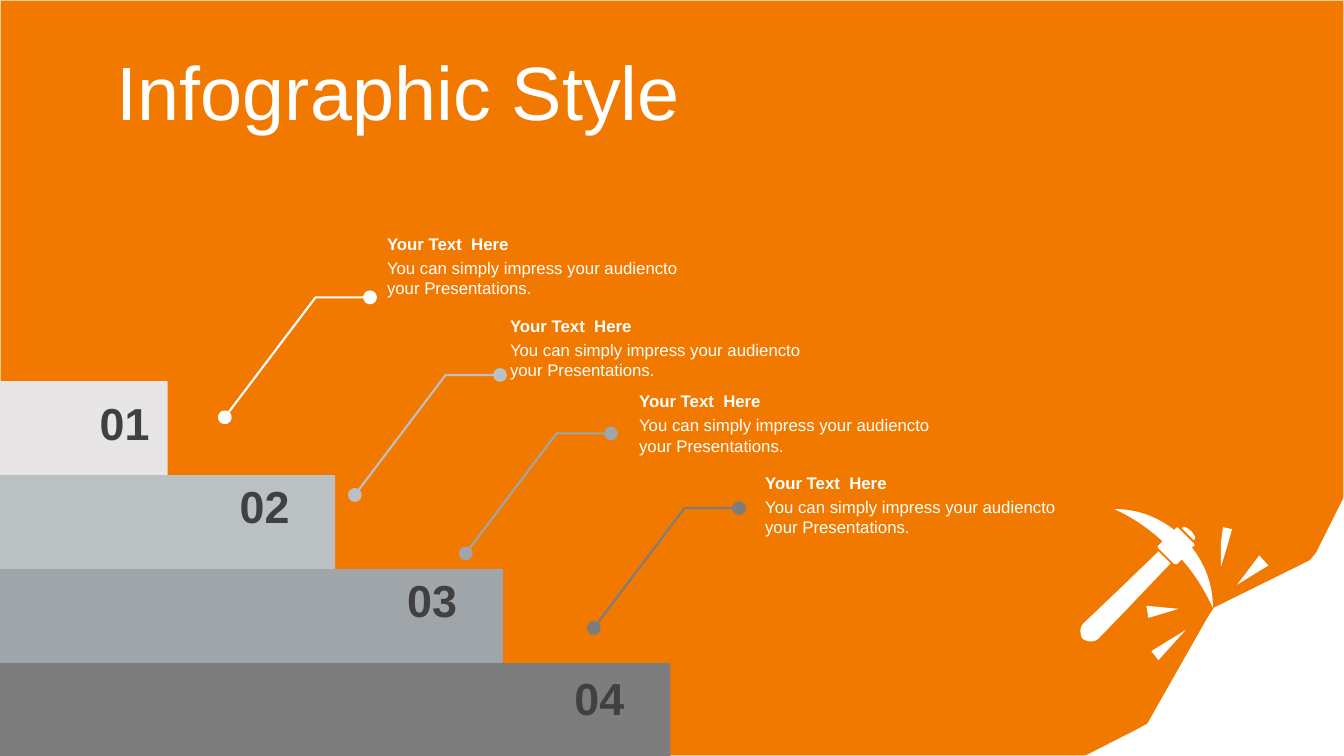
from pptx import Presentation
from pptx.dml.color import RGBColor
from pptx.enum.shapes import MSO_SHAPE
from pptx.enum.text import MSO_ANCHOR, PP_ALIGN
from pptx.oxml.ns import qn
from pptx.util import Pt
from lxml import etree

RECT = MSO_SHAPE.RECTANGLE
TOP, MID = MSO_ANCHOR.TOP, MSO_ANCHOR.MIDDLE
LEFT, CENTER = PP_ALIGN.LEFT, PP_ALIGN.CENTER
SCALE = 9144  # 100 px to the inch
WIDE, HIGH = 1333, 750
FONT = "Arial"
ORANGE, WHITE, PEACH, DARK = "F27900", "FFFFFF", "FFC994", "404040"
HEAD = "Your Text  Here"
BODY = "You can simply impress your audiencto your Presentations."

# Step colour, lead colour, then corners of the number, lead and note
STEPS = [
    ("E7E5E6", WHITE, (69, 388), (223, 414), (374, 227)),
    ("BBC0C3", "BBC0C3", (208, 470), (352, 491), (496, 308)),
    ("A0A5AA", "A0A5AA", (374, 563), (462, 549), (624, 383)),
    ("7D7D7D", "7D7D7D", (540, 660), (589, 623), (749, 464)),
]

# Outlines relative to the scene: a pair is a corner, six numbers are a curve
ROCK = [(0, 263), (55, 235), (66, 229), (125, 125), (132, 114), (227, 67),
        (233, 60), (263, 0), (263, 263)]
SHAFT = [(77, 58), (89, 70), (84, 75), (46, 115), (17, 145),
         (14, 147, 11, 148, 7, 147), (3, 146, 0, 144, 0, 140),
         (-1, 136, 0, 133, 2, 130), (22, 111), (47, 87)]
BLADE = [(81, 48), (67, 35, 51, 24, 33, 16), (55, 16, 75, 23, 93, 37),
         (94, 35), (95, 34, 96, 34, 97, 35), (112, 50),
         (113, 51, 113, 52, 112, 53), (110, 54),
         (124, 72, 131, 92, 131, 114), (123, 97, 113, 80, 100, 66),
         (96, 70), (95, 71, 94, 71, 92, 70), (77, 55),
         (76, 54, 76, 53, 77, 52)]
KNOB = [(112, 47), (100, 35), (101, 34, 102, 34, 104, 34),
        (105, 35, 106, 35, 107, 36), (110, 38, 111, 40, 113, 43),
        (114, 44, 113, 46, 112, 47)]
SPARKS = [
    [(104, 136), (77, 166), (70, 157)],
    [(177, 62), (186, 72), (155, 91)],
    [(67, 124), (65, 112), (97, 115)],
    [(141, 34), (150, 36), (144, 57), (139, 73), (139, 49)],
]


def px(n):
    return round(n * SCALE)


def hue(code):
    return RGBColor.from_string(code)


def paint(shape, fill=None, line=None, width=1):
    shape.shadow.inherit = False
    if fill:
        shape.fill.solid()
        shape.fill.fore_color.rgb = hue(fill)
    else:
        shape.fill.background()
    if line:
        shape.line.color.rgb = hue(line)
        shape.line.width = Pt(width)
    else:
        shape.line.fill.background()
    return shape


def block(slide, box, **look):
    return paint(slide.shapes.add_shape(RECT, *map(px, box)), **look)


def write(frame, text, size=12, color=WHITE, bold=False, align=LEFT,
          anchor=TOP):
    frame.word_wrap = True
    frame.vertical_anchor = anchor
    para = frame.paragraphs[0]
    para.alignment = align
    run = para.add_run()
    run.text = text
    font = run.font
    font.name, font.size, font.bold = FONT, Pt(size), bold
    font.color.rgb = hue(color)
    return para


def label(slide, box, text, **look):
    write(slide.shapes.add_textbox(*map(px, box)).text_frame, text, **look)


def trace(outline):
    """Turn corners and cubic curves into a plain list of points."""
    dots = []
    for part in outline:
        if len(part) == 2:
            dots.append(part)
            continue
        ends = [dots[-1], part[:2], part[2:4], part[4:]]
        for step in range(1, 13):
            t = step / 12
            mix = ((1 - t) ** 3, 3 * t * (1 - t) ** 2,
                   3 * t * t * (1 - t), t ** 3)
            dots.append(tuple(sum(m * e[axis] for m, e in zip(mix, ends))
                              for axis in (0, 1)))
    return dots


def draw(slide, left, top, outline, close=True, **look):
    dots = [(px(left + x), px(top + y)) for x, y in trace(outline)]
    pen = slide.shapes.build_freeform(*dots[0], scale=1)
    pen.add_line_segments(dots[1:], close=close)
    return paint(pen.convert_to_shape(), **look)


def title(slide, box):
    shape = slide.shapes.title
    shape.left, shape.top, shape.width, shape.height = map(px, box)
    para = write(shape.text_frame, "Infographic Style", size=54, anchor=MID)
    para.line_spacing = 0.9
    para.space_before = Pt(10)


def scene(slide, left, top):
    for outline in [ROCK, SHAFT, BLADE, KNOB, *SPARKS]:
        draw(slide, left, top, outline, fill=WHITE)


def stairs(slide, left, top, width, height):
    wide, high = width / len(STEPS), height / len(STEPS)
    for i, (fill, _, spot, _, _) in enumerate(STEPS):
        block(slide, (left, top + i * high, wide * (i + 1), high), fill=fill)
        label(slide, (*spot, 109, 94), f"{i + 1:02}", size=32, color=DARK,
              bold=True, align=CENTER)


def lead(slide, left, top, color):
    shape = draw(slide, left, top, [(0, 0), (90, -119), (144, -119)],
                 close=False, line=color, width=1.5)
    ln = shape.line._get_or_add_ln()
    for end in ("a:headEnd", "a:tailEnd"):
        etree.SubElement(ln, qn(end), type="oval", w="lg", len="lg")


def note(slide, left, top):
    label(slide, (left, top + 24, 319, 50), BODY)
    label(slide, (left, top, 501, 30), HEAD, bold=True)


def main():
    deck = Presentation()
    deck.slide_width, deck.slide_height = px(WIDE), px(HIGH)
    slide = deck.slides.add_slide(deck.slide_layouts[5])

    # Backdrop, sent behind the title
    back = block(slide, (0, 0, WIDE, HIGH), fill=ORANGE, line=PEACH)
    slide.shapes._spTree.insert(2, back._element)

    # Rock and pickaxe
    scene(slide, 1072, 489)

    title(slide, (106, 56, 1227, 79))

    # Notes with their leads
    for _, color, _, bend, spot in STEPS:
        note(slide, *spot)
        lead(slide, *bend, color)

    stairs(slide, 0, 378, 665, 373)
    deck.save("out.pptx")


if __name__ == "__main__":
    main()
